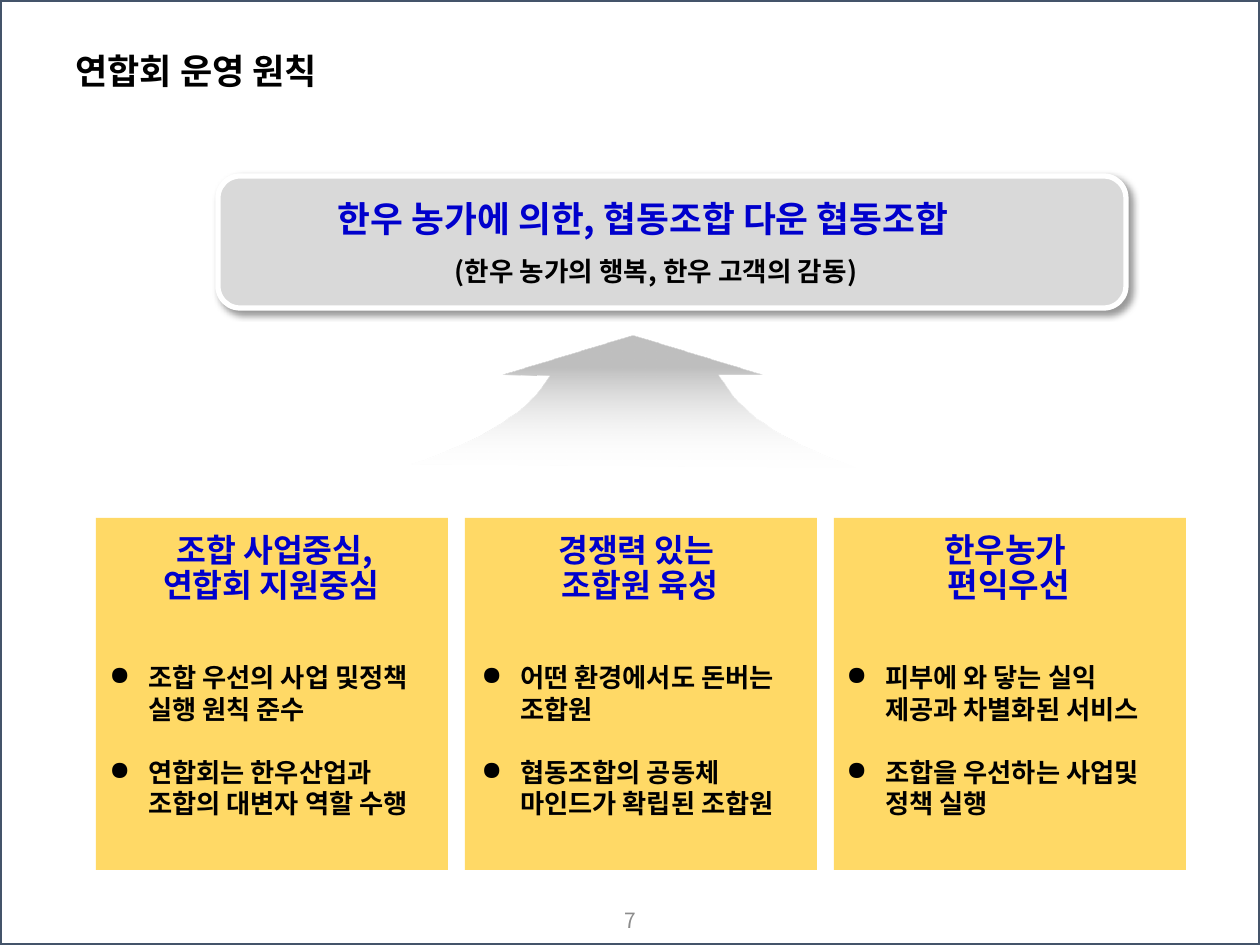
from lxml.etree import SubElement
from pptx import Presentation
from pptx.dml.color import RGBColor
from pptx.enum.shapes import MSO_SHAPE
from pptx.enum.text import MSO_ANCHOR, PP_ALIGN
from pptx.oxml import parse_xml
from pptx.oxml.ns import nsdecls, qn
from pptx.util import Pt

PX = 7257  # EMU in one px, 126 px to the inch
FONT = "Noto Sans CJK KR"
BLACK = RGBColor(0x00, 0x00, 0x00)
WHITE = RGBColor(0xFF, 0xFF, 0xFF)
BLUE = RGBColor(0x00, 0x00, 0xCC)
YELLOW = RGBColor(0xFF, 0xD9, 0x66)
LIGHT_GRAY = RGBColor(0xD9, 0xD9, 0xD9)
ARROW_GRAY = RGBColor(0xBF, 0xBF, 0xBF)
NUMBER_GRAY = RGBColor(0x8C, 0x8C, 0x8C)
FRAME_BLUE = RGBColor(0x44, 0x54, 0x6A)

PRINCIPLES = [
    # heading lines, heading size, bullets, body inset, body width
    ([" 조합 사업중심,", " 연합회 지원중심 "], 18.5,
     ["조합 우선의 사업 및정책 실행 원칙 준수",
      "연합회는 한우산업과 조합의 대변자 역할 수행"], 1, 348),
    (["경쟁력 있는 ", "조합원 육성"], 18.5,
     ["어떤 환경에서도 돈버는 조합원",
      "협동조합의 공동체 마인드가 확립된 조합원"], 4, 338),
    (["한우농가 ", "편익우선"], 19,
     ["피부에 와 닿는 실익 \v제공과 차별화된 서비스",
      "조합을 우선하는 사업및 정책 실행"], 0, 348),
]


def add_block(page, box, fill=None, line=None, width=0, kind=MSO_SHAPE.RECTANGLE):
    shape = page.shapes.add_shape(kind, *(PX * value for value in box))
    shape.shadow.inherit = False
    if fill is None:
        shape.fill.background()
    else:
        shape.fill.solid()
        shape.fill.fore_color.rgb = fill
    if line is None:
        shape.line.fill.background()
    else:
        shape.line.color.rgb = line
        shape.line.width = Pt(width)
    return shape


def add_text(page, box, lines, size, color, align=PP_ALIGN.CENTER, spacing=None, bold=True):
    """Add a text box and return its paragraphs."""
    frame = page.shapes.add_textbox(*(PX * value for value in box)).text_frame
    frame.word_wrap = True
    frame.vertical_anchor = MSO_ANCHOR.MIDDLE
    for index, line in enumerate(lines):
        para = frame.paragraphs[0] if index == 0 else frame.add_paragraph()
        para.text = line
        para.alignment = align
        para.line_spacing = spacing
        for span in para.runs:
            style_span(span, size, color, bold)
    return frame.paragraphs


def style_span(span, size, color, bold=True):
    span.font.size = Pt(size)
    span.font.bold = bold
    span.font.color.rgb = color
    span.font.name = FONT
    SubElement(span.font._element, qn("a:ea"), typeface=FONT)


def indent(para, left, first=0):
    properties = para._p.get_or_add_pPr()
    properties.set("marL", str(PX * left))
    properties.set("indent", str(PX * first))
    return properties


def add_banner(page, left, top):
    banner = add_block(page, (left, top, 908, 132), LIGHT_GRAY, WHITE, 3,
                       MSO_SHAPE.ROUNDED_RECTANGLE)
    properties = banner._element.spPr
    properties.remove(properties.find(qn("a:effectLst")))
    properties.append(parse_xml(
        f'<a:effectLst {nsdecls("a")}><a:outerShdw blurRad="50800" dist="38100" '
        'dir="2700000" algn="tl" rotWithShape="0"><a:srgbClr val="000000">'
        '<a:alpha val="40000"/></a:srgbClr></a:outerShdw></a:effectLst>'))
    motto, aim = add_text(
        page, (left + 14, top + 15, 801, 110),
        ["한우 농가에 의한, 협동조합 다운 협동조합", "(한우 농가의 행복, 한우 고객의 감동)"],
        20.4, BLUE)
    motto.line_spacing, aim.line_spacing = Pt(20), Pt(15)
    aim.space_before = Pt(12)
    aim.runs[0].font.size = Pt(15.2)
    aim.runs[0].font.color.rgb = BLACK
    indent(motto, 21)
    indent(aim, 47)


def curve(start, first, second, end, steps=16):
    """Points along a cubic curve, without its start."""
    for step in range(1, steps + 1):
        t = step / steps
        weights = ((1 - t) ** 3, 3 * t * (1 - t) ** 2, 3 * t * t * (1 - t), t ** 3)
        yield tuple(sum(w * p[axis] for w, p in zip(weights, (start, first, second, end)))
                    for axis in (0, 1))


def add_arrow(page, left, top):
    right_foot, left_foot = (446, 131), (0, 127)
    left_neck = (139, 40)
    points = [*curve(right_foot, (358, 100), (331, 76), (307, 39)),
              (351, 39), (222, 0), (92, 39), left_neck,
              *curve(left_neck, (120, 72), (76, 104), left_foot)]
    builder = page.shapes.build_freeform(left + right_foot[0], top + right_foot[1], scale=PX)
    builder.add_line_segments([(left + x, top + y) for x, y in points], close=True)
    arrow = builder.convert_to_shape()
    arrow.shadow.inherit = False
    arrow.line.fill.background()
    arrow.fill.gradient()
    arrow.fill.gradient_angle = 270
    for stop, position, color in zip(arrow.fill.gradient_stops, (0.24, 1), (ARROW_GRAY, WHITE)):
        stop.position = position
        stop.color.rgb = color
    clear_color = arrow._element.spPr.findall(".//" + qn("a:srgbClr"))[-1]
    SubElement(clear_color, qn("a:alpha"), val="0")


def add_principle(page, left, top, heading, size, bullets, body_inset, body_width):
    add_block(page, (left, top, 352, 352), YELLOW)
    add_text(page, (left, top + 5, 350, 92), heading, size, BLUE, spacing=Pt(20))
    paras = add_text(page, (left + body_inset, top + 130, body_width, 185), bullets, 15, BLACK,
                     PP_ALIGN.LEFT, Pt(18))
    for para in paras:
        SubElement(indent(para, 39, -39), qn("a:buChar"), char="●")
    paras[1].space_before = Pt(18)


def main():
    deck = Presentation()
    deck.slide_width, deck.slide_height = PX * 1260, PX * 945
    page = deck.slides.add_slide(deck.slide_layouts[6])

    # Frame, title and page number
    add_block(page, (0, 0, 1260, 945), line=FRAME_BLUE, width=2.25)
    add_text(page, (63, 35, 942, 77), ["연합회 운영 원칙"], 20, BLACK, PP_ALIGN.LEFT, 0.9)
    add_text(page, (489, 895, 283, 50), ["7"], 12, NUMBER_GRAY, bold=False)

    # Goal, with the arrow that leads up to it
    add_banner(page, 218, 176)
    add_arrow(page, 411, 336)

    # Three principles in equal columns
    for column, principle in enumerate(PRINCIPLES):
        add_principle(page, 96 + 369 * column, 518, *principle)

    deck.save("out.pptx")


if __name__ == "__main__":
    main()
